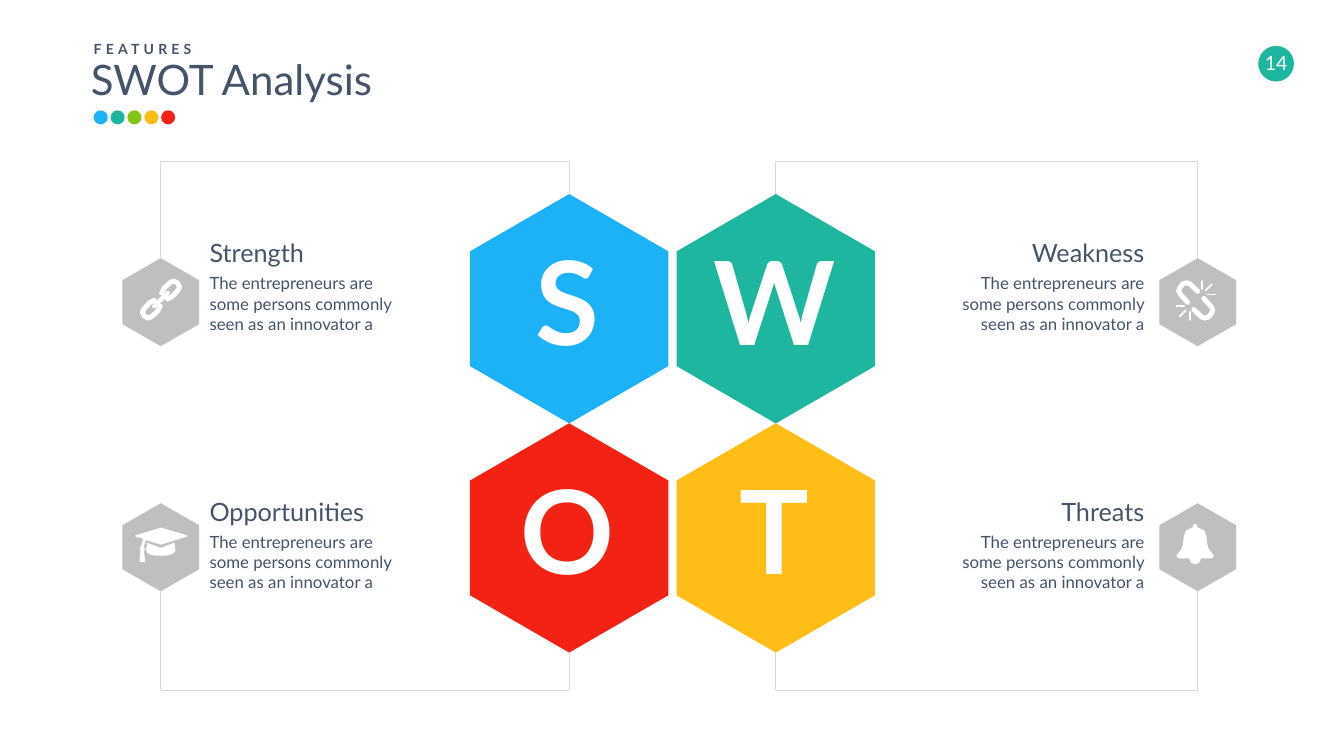
from pptx import Presentation
from pptx.dml.color import RGBColor
from pptx.enum.shapes import MSO_CONNECTOR, MSO_SHAPE
from pptx.enum.text import MSO_ANCHOR, MSO_AUTO_SIZE, PP_ALIGN
from pptx.oxml.ns import qn
from pptx.util import Cm, Pt
from lxml.etree import SubElement

BLUE = RGBColor(0x1D, 0xB1, 0xF5)
TEAL = RGBColor(0x1F, 0xB6, 0x9F)
GREEN = RGBColor(0x85, 0xC5, 0x15)
YELLOW = RGBColor(0xFE, 0xBD, 0x17)
RED = RGBColor(0xF3, 0x22, 0x15)
GREY = RGBColor(0xBF, 0xBF, 0xBF)
RULE = RGBColor(0xD9, 0xD9, 0xD9)
INK = RGBColor(0x44, 0x54, 0x69)
WHITE = RGBColor(0xFF, 0xFF, 0xFF)
FONT = "Lato"

# Content: letter, heading, colour, icon, column, row
BODY = "The entrepreneurs are some persons commonly seen as an innovator a"
SWOT = [
    ("S", "Strength", BLUE, "link", 0, 0),
    ("W", "Weakness", TEAL, "broken", 1, 0),
    ("O", "Opportunities", RED, "cap", 0, 1),
    ("T", "Threats", YELLOW, "bell", 1, 1),
]
DOTS = [BLUE, TEAL, GREEN, YELLOW, RED]

# Icon points in 0.1 mm, measured from the icon's own centre
BELL_SIDE = [(0, -117), (8, -114), (10, -109), (10, -102), (46, -84), (58, -51), (61, -15),
             (69, 10), (94, 41), (91, 51), (81, 56), (30, 56), (20, 79), (0, 86)]
FILLED = {
    "cap": ((0, 0), [
        [(130, -53), (0, -13), (-74, -36), (-86, -5), (-79, 8), (-84, 20), (-79, 69),
         (-81, 74), (-104, 74), (-107, 69), (-102, 20), (-107, 8), (-99, -5), (-89, -43),
         (-124, -53), (-130, -57), (-124, -61), (0, -99), (130, -61), (132, -57)],
        [(74, 15), (68, 27), (54, 36), (30, 42), (0, 43), (-30, 42), (-54, 36), (-68, 27),
         (-74, 15), (-69, -23), (0, 3), (69, -23)]]),
    "bell": ((-13, 0), [BELL_SIDE + [(-x, y) for x, y in reversed(BELL_SIDE)]]),
}
# Stroked icons: centre, then (line width, lines); each line is also turned by 180 degrees
STROKED = {
    "link": ((1, -13), [
        (7, [[(3, -33), (15, -56), (41, -81), (61, -94), (84, -84), (94, -61), (81, -41),
              (56, -15), (33, -3)]]),
        (6, [[(0, 0), (34, -34)]])]),
    "broken": ((-10, -9), [
        (7, [[(10, -46), (-30, -84), (-46, -89), (-64, -84), (-79, -66), (-86, -48),
              (-79, -33), (-41, 10)]]),
        (2.5, [[(-97, 30), (-58, 30)], [(-81, 81), (-51, 51)], [(-30, 58), (-30, 97)]])]),
}

# Layout in cm, indexed by column or row
HEX_W, HEX_H, HEX_X, HEX_Y = 10, 11.56, (28.68, 39.09), (15.56, 27.11)
ICON_W, ICON_H, ICON_X, ICON_Y = 3.86, 4.44, (8.1, 60.35), (15.23, 27.58)
TEXT_X, TEXT_W, HEAD_Y, BODY_Y = (10.31, 46.99), 10.92, (11.84, 24.89), (13.64, 26.67)
FRAME_Y = (8.13, 34.8)

prs = Presentation()
prs.slide_width, prs.slide_height = Cm(67.72), Cm(38.1)
s = prs.slides.add_slide(prs.slide_layouts[5])


def write(tf, text, size, color=INK, align=PP_ALIGN.LEFT, bold=False, wrap=True):
    tf.word_wrap = wrap
    tf.auto_size = MSO_AUTO_SIZE.NONE
    p = tf.paragraphs[0]
    p.text, p.alignment = text, align
    f = p.runs[0].font
    f.name, f.size, f.bold, f.color.rgb = FONT, Pt(size), bold, color
    return p.runs[0]


def add_text(x, y, w, h, *args, **kwargs):
    tb = s.shapes.add_textbox(Cm(x), Cm(y), Cm(w), Cm(h))
    return write(tb.text_frame, *args, **kwargs)


def paint(sp, color):
    sp.shadow.inherit = False
    sp.fill.solid()
    sp.fill.fore_color.rgb = color
    sp.line.fill.background()


def add_circle(x, y, d, color):
    sp = s.shapes.add_shape(MSO_SHAPE.OVAL, Cm(x), Cm(y), Cm(d), Cm(d))
    paint(sp, color)
    return sp


def add_outline(contours, cx, cy, closed=True):
    """Freeform from contours in 0.1 mm around a centre in cm."""
    moved = [[(cx * 100 + x, cy * 100 + y) for x, y in c] for c in contours]
    fb = s.shapes.build_freeform(*moved[0][0], scale=Cm(0.01))
    for i, points in enumerate(moved):
        if i:
            fb.move_to(*points[0])
        fb.add_line_segments(points[1:], close=closed)
    return fb.convert_to_shape()


def add_hexagon(cx, cy, w, h, color):
    x, y = w * 50, h * 50
    points = [(0, -y), (x, -y / 2), (x, y / 2), (0, y), (-x, y / 2), (-x, -y / 2)]
    paint(add_outline([points], cx, cy), color)


def add_rule(x1, y1, x2, y2):
    c = s.shapes.add_connector(MSO_CONNECTOR.STRAIGHT, Cm(x1), Cm(y1), Cm(x2), Cm(y2))
    c.line.color.rgb, c.line.width = RULE, Pt(1)
    SubElement(c._element.spPr, qn("a:effectLst"))


def add_icon(name, cx, cy):
    (dx, dy), parts = FILLED.get(name) or STROKED[name]
    cx, cy = cx + dx / 100, cy + dy / 100
    if name in FILLED:
        paint(add_outline(parts, cx, cy), WHITE)
        return
    for width, lines in parts:
        turned = [[(-x, -y) for x, y in line] for line in lines]
        sp = add_outline(lines + turned, cx, cy, closed=False)
        sp.shadow.inherit = False
        sp.fill.background()
        sp.line.color.rgb, sp.line.width = WHITE, Pt(width)
        sp.line._get_or_add_ln().set("cap", "rnd")


# Header
title = s.shapes.title
title.left, title.top, title.width, title.height = Cm(4.32), Cm(2.57), Cm(14.86), Cm(2.82)
write(title.text_frame, "SWOT Analysis", 60, wrap=False)
title.text_frame.vertical_anchor = MSO_ANCHOR.TOP
r = add_text(4.47, 1.93, 5.46, 1.12, "FEATURES", 20, bold=True, wrap=False)
r.font._element.set("spc", "600")
for i, color in enumerate(DOTS):
    add_circle(4.72 + 0.85 * i, 5.56, 0.71, color)

# Page number
tf = add_circle(63.4, 2.31, 1.8, TEAL).text_frame
write(tf, "14", 28, WHITE, PP_ALIGN.CENTER, wrap=False)
tf.margin_left = tf.margin_right = tf.margin_top = 0
tf.margin_bottom = Cm(0.15)
tf.vertical_anchor = MSO_ANCHOR.MIDDLE

# Quadrants
for letter, heading, color, icon, col, row in SWOT:
    hx, hy, ix, iy = HEX_X[col], HEX_Y[row], ICON_X[col], ICON_Y[row]
    side = 1 if row else -1
    edge = FRAME_Y[row]
    align = PP_ALIGN.RIGHT if col else PP_ALIGN.LEFT

    add_rule(hx, edge, ix, edge)
    add_rule(ix, iy + side * ICON_H / 2, ix, edge)
    add_rule(hx, hy + side * HEX_H / 2, hx, edge)

    add_hexagon(hx, hy, HEX_W, HEX_H, color)
    add_text(hx - 3.68, hy - 4.12, 7.2, 7.34, letter, 166, WHITE, PP_ALIGN.CENTER, bold=True)
    add_hexagon(ix, iy, ICON_W, ICON_H, GREY)
    add_icon(icon, ix, iy)
    add_text(TEXT_X[col], HEAD_Y[row], TEXT_W, 1.8, heading, 36, align=align)
    add_text(TEXT_X[col], BODY_Y[row], TEXT_W, 3.33, BODY, 24, align=align)

prs.save("out.pptx")
